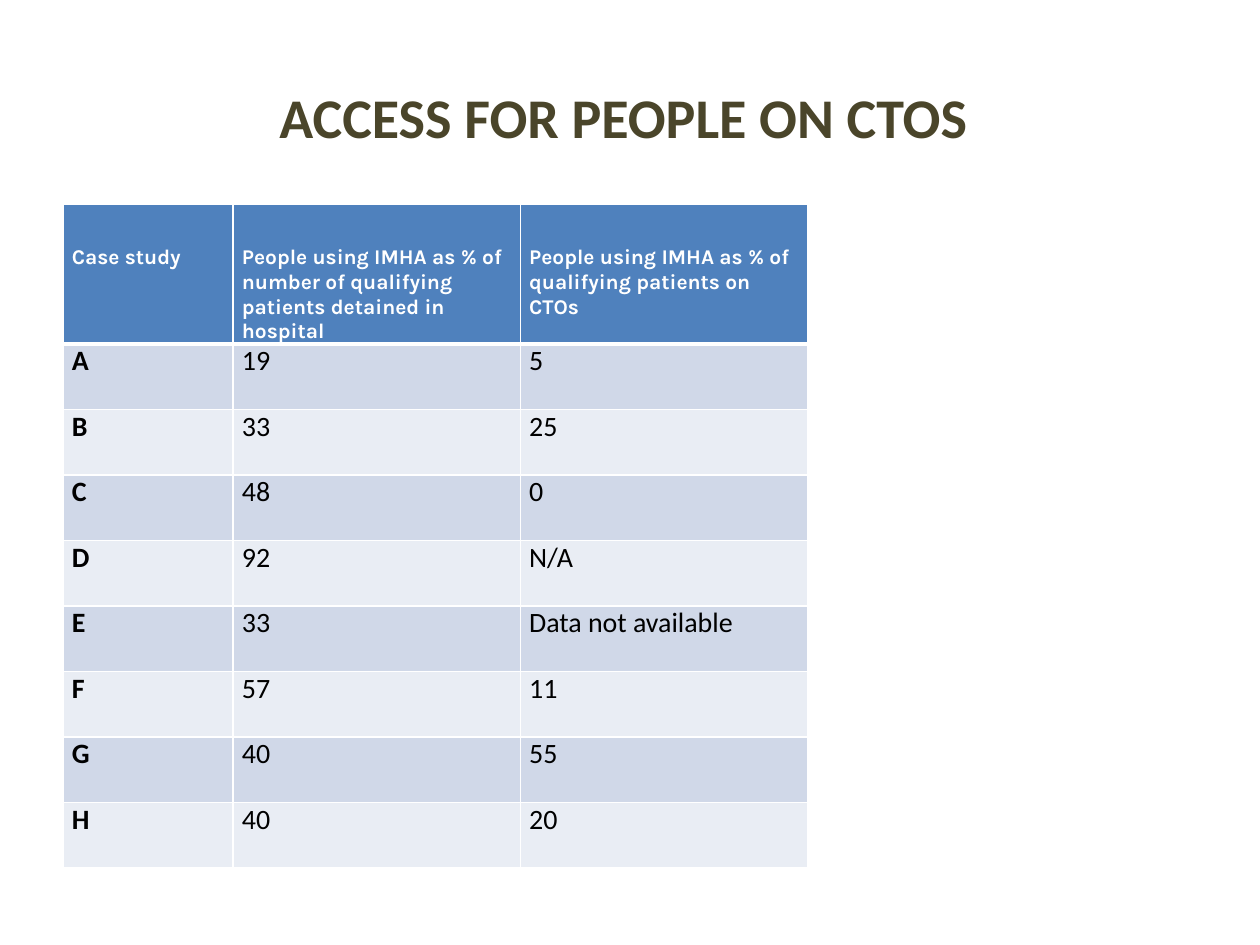
from dataclasses import dataclass

from lxml.etree import SubElement
from pptx import Presentation
from pptx.dml.color import RGBColor
from pptx.enum.text import MSO_ANCHOR, PP_ALIGN
from pptx.oxml.ns import qn
from pptx.slide import Slide
from pptx.table import _Cell
from pptx.text.text import _Paragraph
from pptx.util import Inches, Pt


@dataclass(frozen=True)
class TextStyle:
    font: str
    size: int
    color: str
    bold: bool = False


@dataclass(frozen=True)
class Theme:
    title: TextStyle = TextStyle("Calibri", 32, "4A452A", True)
    header: TextStyle = TextStyle("Karla", 12, "FFFFFF", True)
    case: TextStyle = TextStyle("Calibri", 16, "000000", True)
    value: TextStyle = TextStyle("Calibri", 16, "000000")
    header_fill: str = "4F81BD"
    bands: tuple[str, str] = ("D0D8E8", "E9EDF4")
    rule: str = "FFFFFF"
    thin: int = 1
    thick: int = 3


@dataclass(frozen=True)
class CaseStudy:
    name: str
    detained: str
    on_cto: str


THEME = Theme()
SLIDE_WIDTH, SLIDE_HEIGHT = Inches(10), Inches(7.5)
MARGIN = 0.05 * SLIDE_WIDTH
COLUMN_WIDTHS = (1.35, 2.28, 2.28)
HEADER_HEIGHT, ROW_HEIGHT = 1.1, 0.52
HEADER_INSET, SIDE_INSET = 0.33, 0.07
HEADINGS = (
    "Case study",
    "People using IMHA as % of number of qualifying patients detained in hospital",
    "People using IMHA as % of qualifying patients on CTOs",
)
CASE_STUDIES = (
    CaseStudy("A", "19", "5"),
    CaseStudy("B", "33", "25"),
    CaseStudy("C", "48", "0"),
    CaseStudy("D", "92", "N/A"),
    CaseStudy("E", "33", "Data not available"),
    CaseStudy("F", "57", "11"),
    CaseStudy("G", "40", "55"),
    CaseStudy("H", "40", "20"),
)


def add_run(paragraph: _Paragraph, text: str, style: TextStyle) -> None:
    """Add one styled run to a paragraph."""
    run = paragraph.add_run()
    run.text = text
    run.font.name = style.font
    run.font.size = Pt(style.size)
    run.font.bold = style.bold
    run.font.color.rgb = RGBColor.from_string(style.color)


def set_borders(cell: _Cell, top: int, bottom: int) -> None:
    """Rule all four sides of a cell, with the given top and bottom weights."""
    properties = cell._tc.get_or_add_tcPr()
    weights = {"lnL": THEME.thin, "lnR": THEME.thin, "lnT": top, "lnB": bottom}
    for side, weight in weights.items():
        line = SubElement(properties, qn(f"a:{side}"), w=str(Pt(weight)))
        fill = SubElement(line, qn("a:solidFill"))
        SubElement(fill, qn("a:srgbClr"), val=THEME.rule)


def fill_cell(cell: _Cell, text: str, style: TextStyle, fill: str,
              inset: float, top: int, bottom: int) -> None:
    """Set the borders, fill, margins and text of a cell."""
    set_borders(cell, top, bottom)
    cell.fill.solid()
    cell.fill.fore_color.rgb = RGBColor.from_string(fill)
    cell.margin_left = cell.margin_right = Inches(SIDE_INSET)
    cell.margin_top, cell.margin_bottom = Inches(inset), 0
    add_run(cell.text_frame.paragraphs[0], text, style)


def add_title(slide: Slide, text: str) -> None:
    """Add the centred slide title."""
    title = slide.shapes.add_textbox(
        int(MARGIN), int(0.04 * SLIDE_HEIGHT),
        int(SLIDE_WIDTH - 2 * MARGIN), Inches(1.25))
    frame = title.text_frame
    frame.word_wrap = True
    frame.vertical_anchor = MSO_ANCHOR.MIDDLE
    frame.paragraphs[0].alignment = PP_ALIGN.CENTER
    add_run(frame.paragraphs[0], text, THEME.title)


def add_access_table(slide: Slide) -> None:
    """Add the table of IMHA use by case study."""
    heights = [HEADER_HEIGHT] + [ROW_HEIGHT] * len(CASE_STUDIES)
    table = slide.shapes.add_table(
        len(heights), len(COLUMN_WIDTHS), int(MARGIN), Inches(1.62),
        Inches(sum(COLUMN_WIDTHS)), Inches(sum(heights))).table
    for column, width in zip(table.columns, COLUMN_WIDTHS):
        column.width = Inches(width)
    for row, height in zip(table.rows, heights):
        row.height = Inches(height)
    for column, heading in enumerate(HEADINGS):
        fill_cell(table.cell(0, column), heading, THEME.header,
                  THEME.header_fill, HEADER_INSET, THEME.thin, THEME.thick)
    for index, study in enumerate(CASE_STUDIES):
        band = THEME.bands[index % 2]
        top = THEME.thin if index else THEME.thick
        for column, text in enumerate((study.name, study.detained, study.on_cto)):
            style = THEME.value if column else THEME.case
            fill_cell(table.cell(index + 1, column), text, style,
                      band, 0, top, THEME.thin)


def main() -> None:
    """Build and save the slide."""
    deck = Presentation()
    deck.slide_width, deck.slide_height = SLIDE_WIDTH, SLIDE_HEIGHT
    slide = deck.slides.add_slide(deck.slide_layouts[6])
    add_access_table(slide)
    add_title(slide, "ACCESS FOR PEOPLE ON CTOS ")
    deck.save("out.pptx")


if __name__ == "__main__":
    main()
